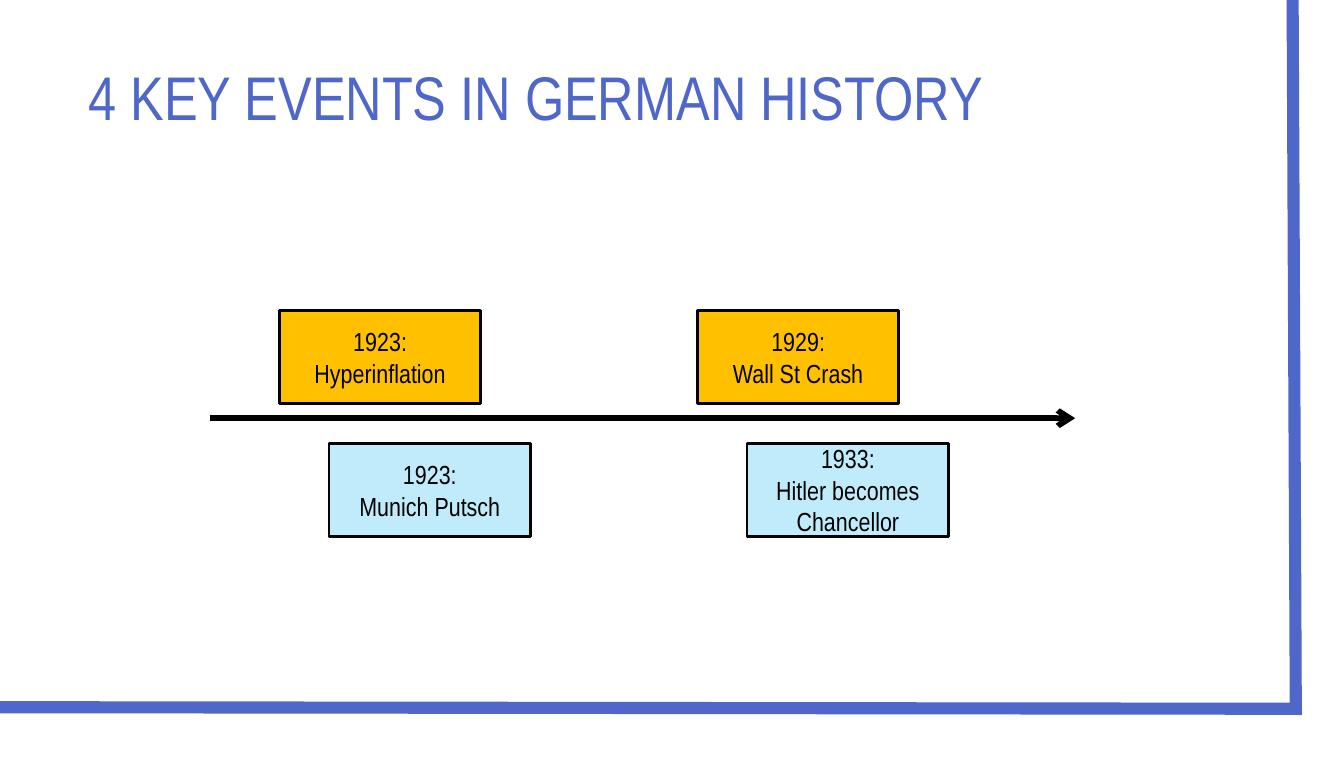
from lxml import etree
from pptx import Presentation
from pptx.dml.color import RGBColor
from pptx.enum import shapes, text
from pptx.oxml.ns import qn
from pptx.util import Cm, Pt

BLUE, BLACK, WHITE = "4E67C8", "000000", "FFFFFF"
AMBER, SKY = "FFC000", "BFEBFA"


def rgb(value):
    return RGBColor.from_string(value)


def write(sp, lines, size=14, color=BLACK, align=text.PP_ALIGN.CENTER, spacing=None):
    tf = sp.text_frame
    tf.word_wrap = True
    tf.auto_size = text.MSO_AUTO_SIZE.NONE
    tf.vertical_anchor = text.MSO_ANCHOR.MIDDLE
    for i, line in enumerate(lines):
        p = tf.add_paragraph() if i else tf.paragraphs[0]
        p.alignment = align
        p.line_spacing = spacing
        r = p.add_run()
        r.text = line
        r.font.name = "Arial Narrow"
        r.font.size = Pt(size)
        r.font.color.rgb = rgb(color)


prs = Presentation()
prs.slide_width, prs.slide_height = Cm(25.4), Cm(14.3)
s = prs.slides.add_slide(prs.slide_layouts[5])

# White panel with a blue rule along its right and bottom edges
panel = s.shapes.add_shape(shapes.MSO_SHAPE.RECTANGLE, 0, 0, Cm(24.97), Cm(13.84))
panel.shadow.inherit = False
panel.fill.solid()
panel.fill.fore_color.rgb = rgb(WHITE)
panel.line.fill.background()

fb = s.shapes.build_freeform(Cm(24.43), 0)
fb.add_line_segments([(Cm(24.49), Cm(13.39)), (Cm(-0.05), Cm(13.36))], close=False)
frame = fb.convert_to_shape()
frame.shadow.inherit = False
frame.fill.background()
frame.line.color.rgb = rgb(BLUE)
frame.line.width = Pt(6.5)
etree.SubElement(frame.line._get_or_add_ln(), qn("a:miter"), lim="800000")

# Title, brought in front of the panel
title = s.shapes.title
title.element.getparent().append(title.element)
title.left, title.top, title.width, title.height = Cm(1.42), Cm(0.69), Cm(21.67), Cm(2.41)
write(title, ["4 KEY EVENTS IN GERMAN HISTORY"], size=33, color=BLUE,
      align=text.PP_ALIGN.LEFT, spacing=0.9)

# Time arrow
arrow = s.shapes.add_connector(shapes.MSO_CONNECTOR.STRAIGHT,
                               Cm(3.96), Cm(7.9), Cm(20.32), Cm(7.9))
arrow.line.color.rgb = rgb(BLACK)
arrow.line.width = Pt(3)
etree.SubElement(arrow.line._get_or_add_ln(), qn("a:tailEnd"), type="arrow")
etree.SubElement(arrow.element.spPr, qn("a:effectLst"))

# Events above and below the arrow: left, top, fill, events
rows = [
    (5.28, 5.87, AMBER, [("1923:", "Hyperinflation"), ("1929:", "Wall St Crash")]),
    (6.22, 8.38, SKY, [("1923:", "Munich Putsch"), ("1933:", "Hitler becomes Chancellor")]),
]
for left, top, fill, events in rows:
    for i, event in enumerate(events):
        sp = s.shapes.add_shape(shapes.MSO_SHAPE.RECTANGLE,
                                Cm(left + 7.9 * i), Cm(top), Cm(3.81), Cm(1.75))
        sp.shadow.inherit = False
        sp.fill.solid()
        sp.fill.fore_color.rgb = rgb(fill)
        sp.line.color.rgb = rgb(BLACK)
        sp.line.width = Pt(1.5)
        write(sp, event)

prs.save("out.pptx")
